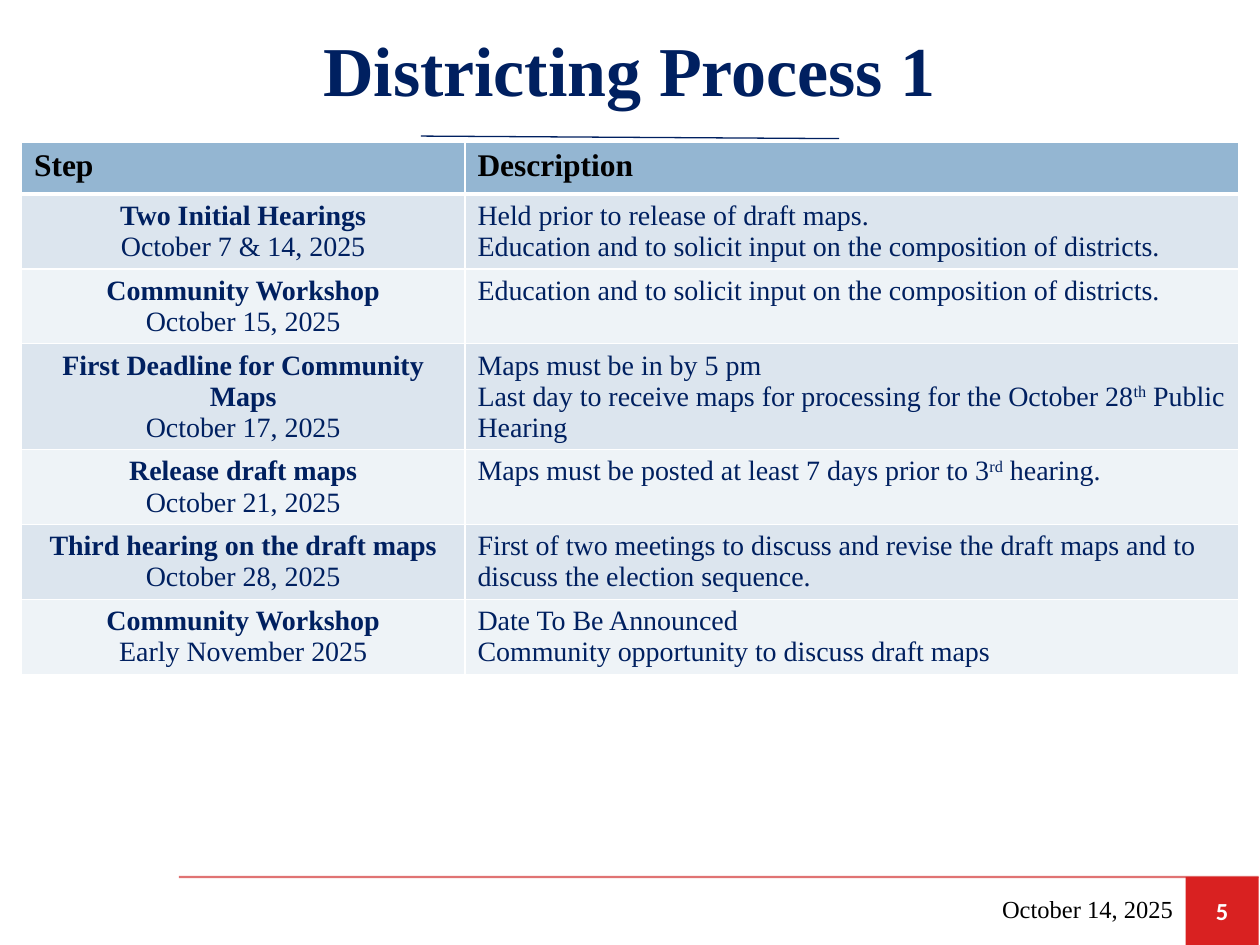
from lxml.etree import SubElement
from pptx import Presentation
from pptx.dml.color import RGBColor
from pptx.enum.shapes import MSO_CONNECTOR, MSO_SHAPE
from pptx.enum.text import MSO_ANCHOR, MSO_AUTO_SIZE, PP_ALIGN
from pptx.oxml.ns import qn
from pptx.util import Inches, Pt

NAVY, BLACK, WHITE, RED = "002060", "000000", "FFFFFF", "D92121"
HEADER_FILL, BAND_FILLS = "94B6D2", ("DCE5EE", "EEF3F7")
SERIF = "Times New Roman"
COLUMN_WIDTHS = (3.52, 6.14)
ROW_HEIGHTS = (0.41, 0.59, 0.59, 0.83, 0.59, 0.59, 0.59)

# Step, date, description paragraphs; "^" sets off a superscript.
STEPS = [
    ("Two Initial Hearings", "October 7 & 14, 2025",
     ["Held prior to release of draft maps.",
      "Education and to solicit input on the composition of districts."]),
    ("Community Workshop", "October 15, 2025",
     ["Education and to solicit input on the composition of districts."]),
    ("First Deadline for Community Maps", "October 17, 2025",
     ["Maps must be in by 5 pm",
      "Last day to receive maps for processing for the October 28^th^ Public Hearing"]),
    ("Release draft maps", "October 21, 2025",
     ["Maps must be posted at least 7 days prior to 3^rd^ hearing."]),
    ("Third hearing on the draft maps", "October 28, 2025",
     ["First of two meetings to discuss and revise the draft maps and to "
      "discuss the election sequence."]),
    ("Community Workshop", "Early November 2025",
     ["Date To Be Announced", "Community opportunity to discuss draft maps"]),
]


def rgb(color):
    return RGBColor.from_string(color)


def write(p, text, size=16, color=NAVY, bold=False, font=SERIF, align=PP_ALIGN.LEFT):
    """Fill a paragraph; every second part between "^" marks is raised."""
    p.alignment = align
    for i, part in enumerate(text.split("^")):
        r = p.add_run()
        r.text = part
        r.font.name, r.font.size, r.font.bold = font, Pt(size), bold
        r.font.color.rgb = rgb(color)
        if i % 2:
            r.font._element.set("baseline", "30000")


def add_line(slide, x1, y1, x2, y2, color, width, opacity=None):
    line = slide.shapes.add_connector(
        MSO_CONNECTOR.STRAIGHT, Inches(x1), Inches(y1), Inches(x2), Inches(y2))
    line.line.color.rgb = rgb(color)
    line.line.width = Pt(width)
    sp_pr = line._element.spPr
    if opacity is not None:
        clr = next(sp_pr.iter(qn("a:srgbClr")))
        SubElement(clr, qn("a:alpha"), val=str(opacity * 1000))
    SubElement(sp_pr, qn("a:effectLst"))


def add_page_number(slide, number):
    sp = slide.shapes.add_shape(
        MSO_SHAPE.RECTANGLE, Inches(9.41), Inches(6.96), Inches(0.58), Inches(0.54))
    sp.shadow.inherit = False
    sp.fill.solid()
    sp.fill.fore_color.rgb = rgb(RED)
    sp.line.fill.background()
    tf = sp.text_frame
    tf.vertical_anchor = MSO_ANCHOR.MIDDLE
    write(tf.paragraphs[0], number, size=14, color=WHITE, bold=True,
          font="Calibri", align=PP_ALIGN.CENTER)


def set_title(slide, text):
    title = slide.shapes.title
    title.left, title.top = Inches(0.37), Inches(0)
    title.width, title.height = Inches(9.25), Inches(1.08)
    tf = title.text_frame
    tf.auto_size = MSO_AUTO_SIZE.NONE
    tf.vertical_anchor = MSO_ANCHOR.MIDDLE
    write(tf.paragraphs[0], text, size=40, bold=True, align=PP_ALIGN.CENTER)


def style_cell(cell, fill, bottom=1):
    tc_pr = cell._tc.get_or_add_tcPr()
    for side, width in (("L", 1), ("R", 1), ("T", 1), ("B", bottom)):
        ln = SubElement(tc_pr, qn(f"a:ln{side}"), w=str(Pt(width)))
        solid = SubElement(ln, qn("a:solidFill"))
        SubElement(solid, qn("a:srgbClr"), val=WHITE)
    cell.fill.solid()
    cell.fill.fore_color.rgb = rgb(fill)


def add_steps_table(slide):
    table = slide.shapes.add_table(
        len(ROW_HEIGHTS), len(COLUMN_WIDTHS), Inches(0.17), Inches(1.13),
        Inches(sum(COLUMN_WIDTHS)), Inches(sum(ROW_HEIGHTS))).table
    for column, width in zip(table.columns, COLUMN_WIDTHS):
        column.width = Inches(width)
    for row, height in zip(table.rows, ROW_HEIGHTS):
        row.height = Inches(height)

    for col, heading in enumerate(("Step", "Description")):
        cell = table.cell(0, col)
        style_cell(cell, HEADER_FILL, bottom=3)
        write(cell.text_frame.paragraphs[0], heading, size=18, color=BLACK, bold=True)

    for row, (step, date, description) in enumerate(STEPS, start=1):
        step_cell, description_cell = table.cell(row, 0), table.cell(row, 1)
        for cell in (step_cell, description_cell):
            style_cell(cell, BAND_FILLS[(row - 1) % 2])
        tf = step_cell.text_frame
        write(tf.paragraphs[0], step, bold=True, align=PP_ALIGN.CENTER)
        write(tf.add_paragraph(), date, align=PP_ALIGN.CENTER)
        tf = description_cell.text_frame
        for i, text in enumerate(description):
            write(tf.add_paragraph() if i else tf.paragraphs[0], text)


def add_date(slide, text):
    box = slide.shapes.add_textbox(Inches(6.49), Inches(7.01), Inches(2.92), Inches(0.4))
    tf = box.text_frame
    tf.word_wrap = True
    tf.vertical_anchor = MSO_ANCHOR.MIDDLE
    write(tf.paragraphs[0], text, size=14, color=BLACK, align=PP_ALIGN.RIGHT)


def main():
    prs = Presentation()
    prs.slide_width, prs.slide_height = Inches(10), Inches(7.5)
    slide = prs.slides.add_slide(prs.slide_layouts[5])
    add_line(slide, 1.42, 6.96, 9.99, 6.96, "C80000", 1.25, opacity=55)
    add_page_number(slide, "5")
    set_title(slide, "Districting Process 1")
    add_line(slide, 3.34, 1.08, 6.66, 1.1, NAVY, 0.75)
    add_steps_table(slide)
    add_date(slide, "October 14, 2025")
    prs.save("out.pptx")


if __name__ == "__main__":
    main()
